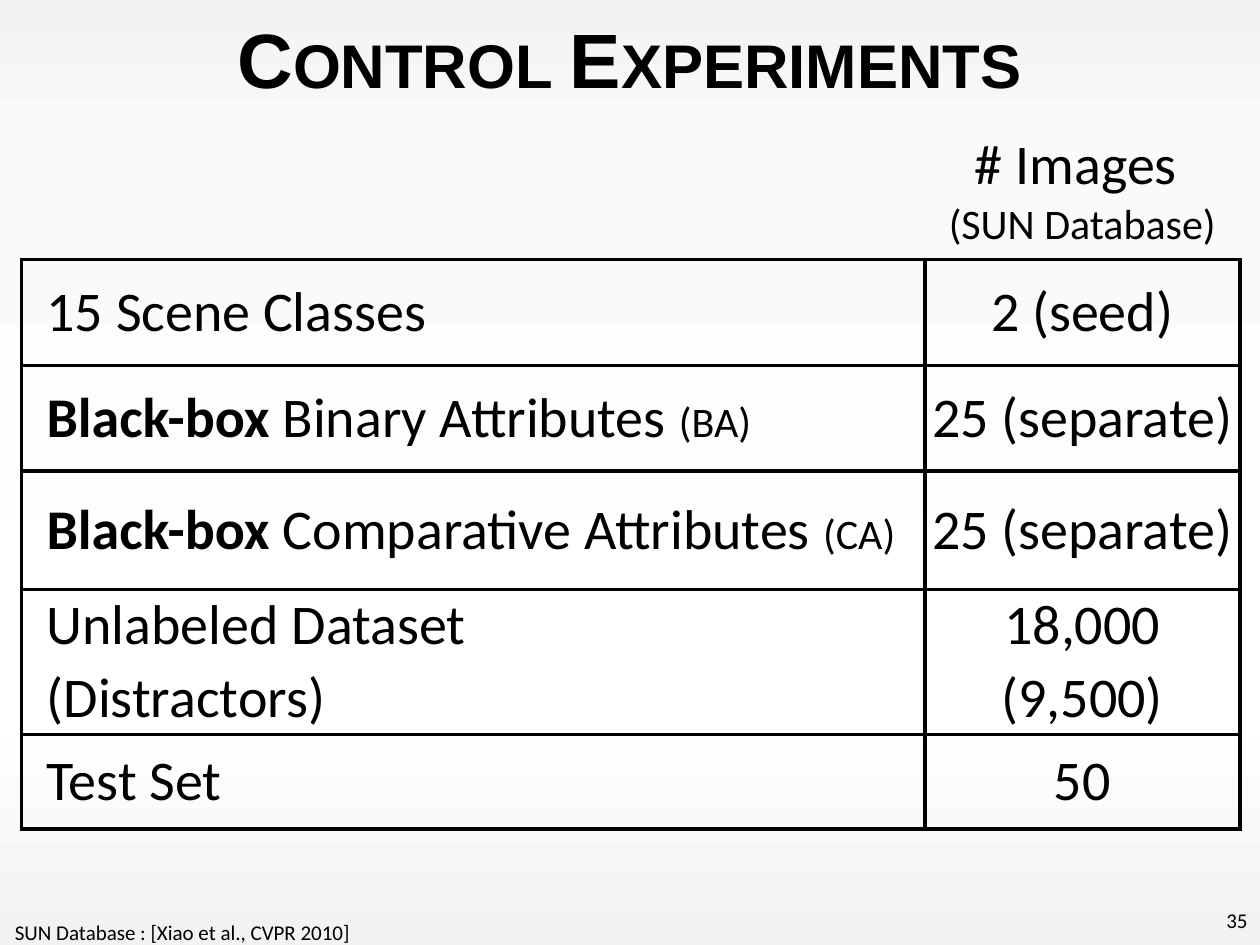
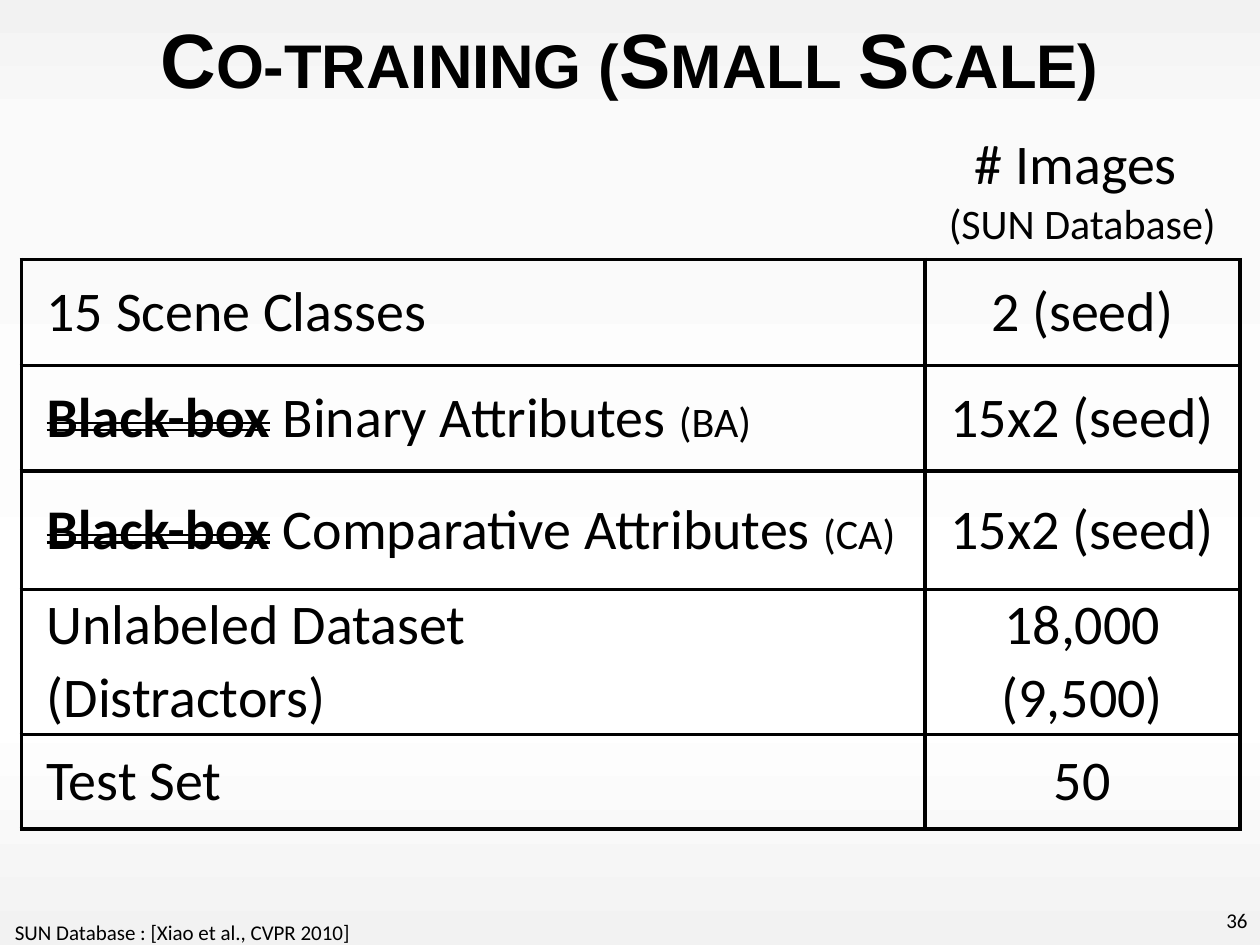
from dataclasses import dataclass

from lxml import etree
from pptx import Presentation
from pptx.dml.color import RGBColor
from pptx.enum.text import MSO_ANCHOR, MSO_AUTO_SIZE, PP_ALIGN
from pptx.oxml.ns import qn
from pptx.util import Emu, Pt

MIDDLE, TOP = MSO_ANCHOR.MIDDLE, MSO_ANCHOR.TOP
LEFT, CENTER, RIGHT = PP_ALIGN.LEFT, PP_ALIGN.CENTER, PP_ALIGN.RIGHT
FIT = MSO_AUTO_SIZE.SHAPE_TO_FIT_TEXT

SCALE = 9144  # EMU in one px, 100 px to the inch
INK = "000000"
HEAD, BODY = "Arial", "Calibri"
BIG, MID, SMALL = 32, 24, 12
RULE = 2.25
STOPS = [(0, "F2F2F2"), (14, "FAFAFA"), (75, "FFFFFF"), (100, "F2F2F2")]
WIDTHS = (717, 250)
SIDES = "LRTB"
SOURCE = "SUN Database : [Xiao et al., CVPR 2010]"


@dataclass
class Span:
    text: str
    size: int = BIG
    bold: bool = False
    struck: bool = False


@dataclass
class Row:
    height: int
    label: list[Span]
    count: str
    sides: str = SIDES


@dataclass
class Page:
    title: str
    number: int
    count: str
    struck: bool


PAGES = [
    Page("Control Experiments", 35, "25 (separate)", False),
    Page("Co-training (Small Scale)", 36, "15x2 (seed)", True),
]


def px(num: int) -> Emu:
    return Emu(num * SCALE)


def tint(code: str) -> RGBColor:
    return RGBColor.from_string(code)


def style(font, size: float, bold: bool = False, face: str = BODY) -> None:
    font.name, font.size, font.bold = face, Pt(size), bold
    font.color.rgb = tint(INK)


def place(shape, left: int, top: int, width: int, height: int) -> None:
    shape.left, shape.top = px(left), px(top)
    shape.width, shape.height = px(width), px(height)


def paint(master) -> None:
    """Give every slide the same vertical gradient."""
    fill = master.background.fill
    fill.gradient()
    fill.gradient_angle = 270
    stops = master.element.find(".//" + qn("a:gsLst"))
    for old in list(stops):
        stops.remove(old)
    for pos, code in STOPS:
        stop = etree.SubElement(stops, qn("a:gs"), pos=str(pos * 1000))
        etree.SubElement(stop, qn("a:srgbClr"), val=code)


def add_title(slide, text: str) -> None:
    title = slide.shapes.title
    place(title, 12, 0, 975, 92)
    frame = title.text_frame
    frame.text = text
    frame.vertical_anchor = MIDDLE
    para = frame.paragraphs[0]
    para.alignment = CENTER
    run = para.runs[0]
    style(run.font, 44, True, HEAD)
    run.font._element.set("cap", "small")


def add_note(slide, text: str, spot: tuple, align, anchor, wrap: bool) -> None:
    box = slide.shapes.add_textbox(*map(px, spot))
    frame = box.text_frame
    frame.text = text
    frame.word_wrap = wrap
    frame.vertical_anchor = anchor
    if not wrap:
        frame.auto_size = FIT
    para = frame.paragraphs[0]
    para.alignment = align
    style(para.runs[0].font, SMALL)


def edge(cell, sides: str) -> None:
    """Rule the named sides of a cell and clear the others."""
    props = cell._tc.get_or_add_tcPr()
    for at, side in enumerate(SIDES):
        line = etree.Element(qn(f"a:ln{side}"), w=str(Pt(RULE)))
        if side in sides:
            fill = etree.SubElement(line, qn("a:solidFill"))
            etree.SubElement(fill, qn("a:srgbClr"), val=INK)
        else:
            etree.SubElement(line, qn("a:noFill"))
        props.insert(at, line)


def set_cell(cell, lines: list[list[Span]], sides: str, align, pads: tuple) -> None:
    cell.fill.background()
    edge(cell, sides)
    cell.vertical_anchor = MIDDLE
    cell.margin_left, cell.margin_right = map(px, pads)
    cell.margin_top = cell.margin_bottom = 0
    frame = cell.text_frame
    for at, spans in enumerate(lines):
        para = frame.add_paragraph() if at else frame.paragraphs[0]
        para.alignment = align
        for span in spans:
            run = para.add_run()
            run.text = span.text
            style(run.font, span.size, span.bold)
            if span.struck:
                run.font._element.set("strike", "dblStrike")


def list_rows(page: Page) -> list[Row]:
    def trait(kind: str, code: str) -> list[Span]:
        return [Span("Black-box", bold=True, struck=page.struck),
                Span(f" {kind} Attributes "), Span(f"({code})", MID)]

    return [
        Row(84, [Span("15 Scene Classes")], "2 (seed)"),
        Row(84, trait("Binary", "BA"), page.count),
        Row(94, trait("Comparative", "CA"), page.count),
        Row(57, [Span("Unlabeled Dataset")], "18,000", "LRT"),
        Row(58, [Span("(Distractors)")], "(9,500)", "LRB"),
        Row(75, [Span("Test Set")], "50"),
    ]


def add_grid(slide, rows: list[Row]) -> None:
    heights = [108] + [row.height for row in rows]
    spot = (17, 98, sum(WIDTHS), sum(heights))
    grid = slide.shapes.add_table(len(heights), 2, *map(px, spot)).table
    grid.first_row = grid.horz_banding = False
    for col, width in zip(grid.columns, WIDTHS):
        col.width = px(width)
    for line, height in zip(grid.rows, heights):
        line.height = px(height)
    heading = [[Span("# Images ")], [Span("(SUN Database)", MID)]]
    set_cell(grid.cell(0, 0), [], "B", LEFT, (10, 10))
    set_cell(grid.cell(0, 1), heading, "B", CENTER, (10, 10))
    for at, row in enumerate(rows, 1):
        set_cell(grid.cell(at, 0), [row.label], row.sides, LEFT, (20, 5))
        set_cell(grid.cell(at, 1), [[Span(row.count)]], row.sides, CENTER, (5, 5))


def main() -> None:
    deck = Presentation()
    deck.slide_width, deck.slide_height = px(1000), px(750)
    paint(deck.slide_master)
    for page in PAGES:
        slide = deck.slides.add_slide(deck.slide_layouts[5])
        add_title(slide, page.title)
        add_note(slide, str(page.number), (767, 710, 233, 40), RIGHT, MIDDLE, True)
        add_grid(slide, list_rows(page))
        add_note(slide, SOURCE, (2, 725, 294, 30), LEFT, TOP, False)
    deck.save("out.pptx")


if __name__ == "__main__":
    main()
